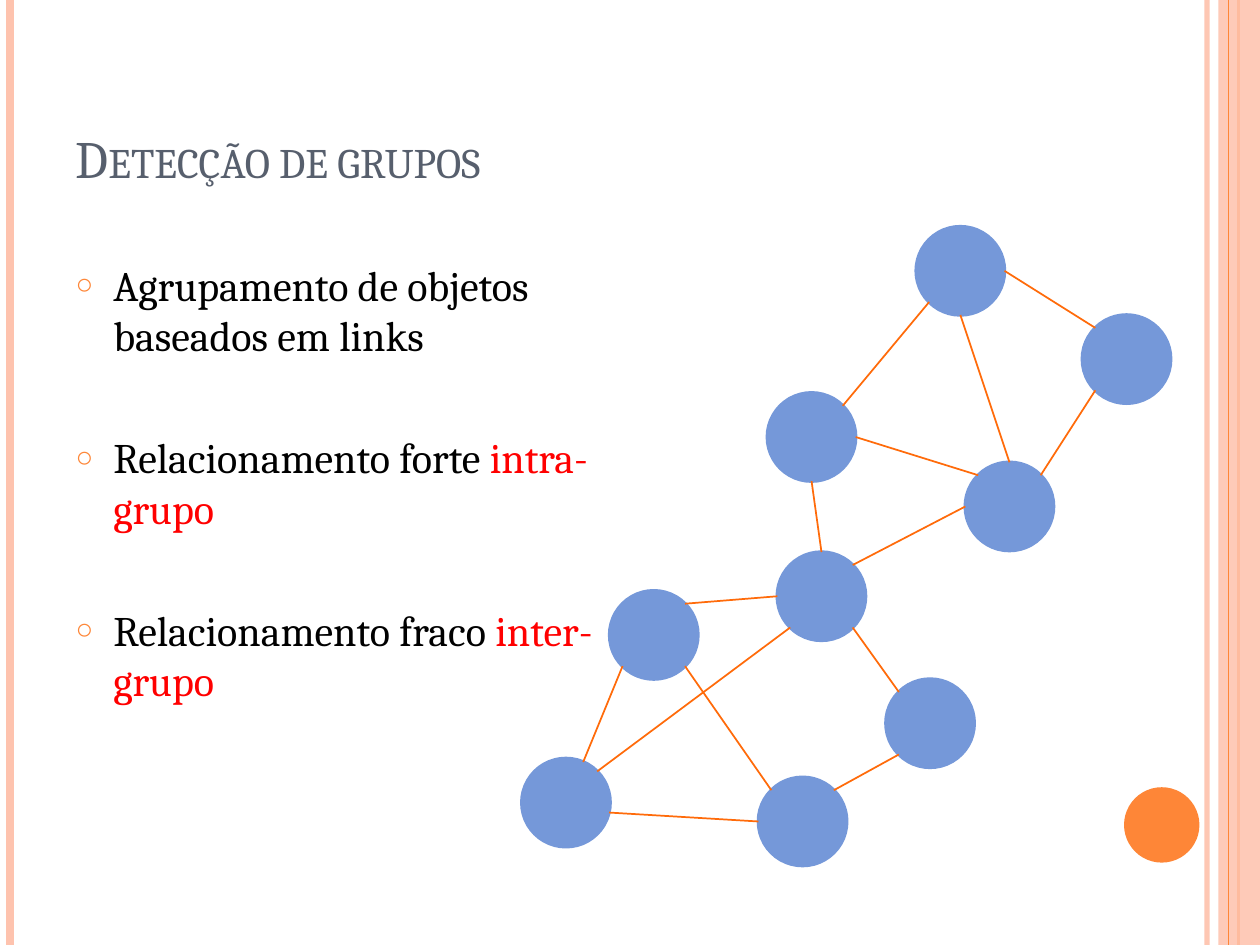
import math

import pptx
from lxml import etree
from pptx.dml.color import RGBColor
from pptx.enum.shapes import MSO_CONNECTOR, MSO_SHAPE
from pptx.enum.text import MSO_ANCHOR, MSO_AUTO_SIZE, PP_ALIGN
from pptx.oxml.ns import qn
from pptx.util import Cm, Pt

COLORS = {
    "peach": "FEC3AE", "orange": "FE8637", "link": "FF6B0A", "node": "7598D9",
    "title": "575F6D", "text": "000000", "accent": "FF0000",
}
FONT = "Cambria"
W, H = 25.4, 19.05
NODE_SIZE = 1.78

# Left and top of each node, relative to the graph's box
NODES = {
    "top": (7.95, 0), "right": (11.3, 1.78), "left": (4.95, 3.35),
    "hub": (8.94, 4.75), "bridge": (5.15, 6.56), "west": (1.77, 7.34),
    "east": (7.34, 9.12), "corner": (0, 10.72), "south": (4.77, 11.1),
}
# Node, angle on its rim (degrees, counterclockwise from the right), twice
LINKS = [
    ("top", 225, "left", 45), ("top", 270, "hub", 90),
    ("top", 0, "right", 135), ("right", 225, "hub", 45),
    ("left", 0, "hub", 135), ("left", 270, "bridge", 90),
    ("hub", 180, "bridge", 45), ("bridge", 180, "west", 45),
    ("bridge", 225, "corner", 45), ("bridge", 315, "east", 135),
    ("west", 225, "corner", 67), ("west", 315, "south", 135),
    ("corner", 347, "south", 180), ("south", 45, "east", 225),
]
ITEMS = [
    ("Agrupamento de objetos baseados em links", ""),
    ("Relacionamento forte ", "intra-grupo"),
    ("Relacionamento fraco ", "inter-grupo"),
]


def rgb(name):
    return RGBColor.from_string(COLORS[name])


def set_alpha(fill, percent):
    clr = fill._xPr.find(qn("a:solidFill"))[0]
    etree.SubElement(clr, qn("a:alpha")).set("val", str(percent * 1000))


def add_line(s, x1, y1, x2, y2, color, width):
    ln = s.shapes.add_connector(MSO_CONNECTOR.STRAIGHT, Cm(x1), Cm(y1), Cm(x2), Cm(y2))
    ln.line.color.rgb = rgb(color)
    ln.line.width = Pt(width)
    etree.SubElement(ln._element.spPr, qn("a:effectLst"))
    return ln


def add_solid(s, kind, x, y, w, h, color):
    sp = s.shapes.add_shape(kind, Cm(x), Cm(y), Cm(w), Cm(h))
    sp.shadow.inherit = False
    sp.fill.solid()
    sp.fill.fore_color.rgb = rgb(color)
    sp.line.fill.background()
    return sp


def place(sp, x, y, w, h):
    sp.left, sp.top, sp.width, sp.height = Cm(x), Cm(y), Cm(w), Cm(h)
    sp.text_frame.auto_size = MSO_AUTO_SIZE.NONE


def format_run(r, size, color):
    r.font.name = FONT
    r.font.size = Pt(size)
    r.font.color.rgb = rgb(color)


def set_bullet(p):
    pPr = p._p.get_or_add_pPr()
    pPr.set("marL", str(Cm(0.76)))
    pPr.set("indent", str(-Cm(0.76)))
    clr = etree.SubElement(pPr, qn("a:buClr"))
    etree.SubElement(clr, qn("a:srgbClr")).set("val", COLORS["orange"])
    etree.SubElement(pPr, qn("a:buSzPct")).set("val", "70000")
    etree.SubElement(pPr, qn("a:buChar")).set("char", "○")


def add_frame(s, w, h):
    """Stripes down both edges and the dot at the lower right."""
    inner = add_line(s, w - 1.07, 0, w - 1.07, h, "peach", 3)
    set_alpha(inner.line.fill, 93)
    add_line(s, 0.2, 0, 0.2, h, "peach", 4.5)
    add_line(s, w - 0.43, 0, w - 0.43, h, "orange", 1.5)
    band = add_solid(s, MSO_SHAPE.RECTANGLE, w - 0.84, 0, 0.84, h, "peach")
    set_alpha(band.fill, 87)
    add_line(s, w - 0.64, 0, w - 0.64, h, "orange", 0.75)
    add_solid(s, MSO_SHAPE.OVAL, w - 2.74, h - 3.18, 1.52, 1.52, "orange")


def fill_title(sp, x, y, w, h):
    place(sp, x, y, w, h)
    tf = sp.text_frame
    tf.text = "Detecção de grupos"
    tf.vertical_anchor = MSO_ANCHOR.BOTTOM
    p = tf.paragraphs[0]
    p.alignment = PP_ALIGN.LEFT
    format_run(p.runs[0], 30, "title")
    p.runs[0].font._element.set("cap", "small")


def fill_list(sp, x, y, w, h):
    place(sp, x, y, w, h)
    tf = sp.text_frame
    for i, (plain, accent) in enumerate(ITEMS):
        p = tf.add_paragraph() if i else tf.paragraphs[0]
        p.space_before = Pt(41 if i else 6)
        set_bullet(p)
        for text, color in ((plain, "text"), (accent, "accent")):
            if text:
                r = p.add_run()
                r.text = text
                format_run(r, 24, color)


def add_graph(s, x, y):
    radius = NODE_SIZE / 2

    def rim(name, angle):
        left, top = NODES[name]
        a = math.radians(angle)
        return (x + left + radius * (1 + math.cos(a)),
                y + top + radius * (1 - math.sin(a)))

    for left, top in NODES.values():
        sp = add_solid(s, MSO_SHAPE.OVAL, x + left, y + top, NODE_SIZE, NODE_SIZE, "node")
        sp.line.color.rgb = rgb("node")
        sp.line.width = Pt(2)
    for start, angle1, end, angle2 in LINKS:
        add_line(s, *rim(start, angle1), *rim(end, angle2), "link", 1)


def main():
    prs = pptx.Presentation()
    prs.slide_width, prs.slide_height = Cm(W), Cm(H)
    s = prs.slides.add_slide(prs.slide_layouts[1])
    add_frame(s, W, H)
    fill_title(s.shapes.title, 1.27, 0.76, 20.75, 3.18)
    fill_list(s.placeholders[1], 1.27, 5.1, 11.84, 13.54)
    add_graph(s, 10.52, 4.57)
    prs.save("out.pptx")


if __name__ == "__main__":
    main()
